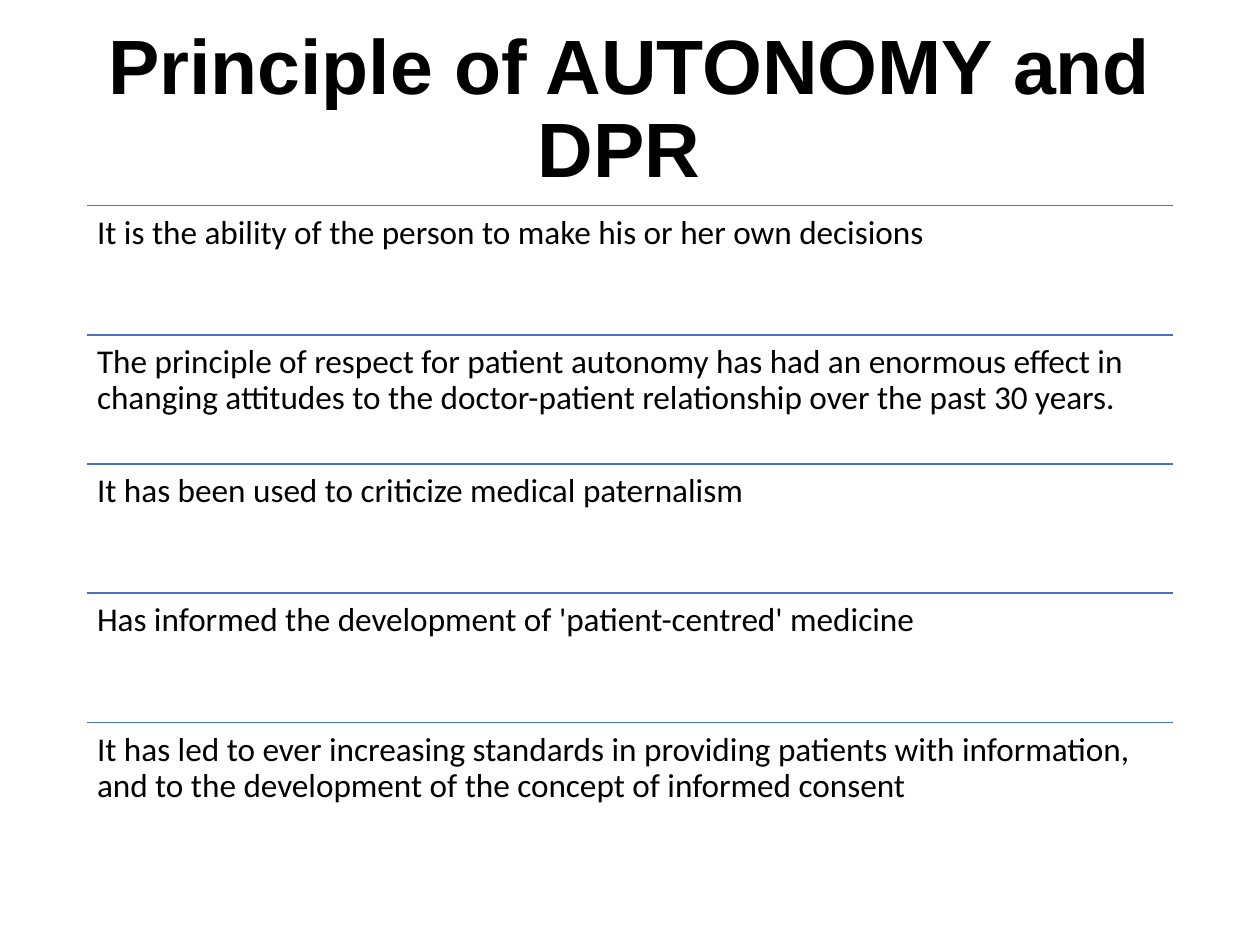
from lxml.etree import SubElement
from pptx import Presentation
from pptx.dml.color import RGBColor
from pptx.enum.shapes import MSO_CONNECTOR
from pptx.enum.text import MSO_ANCHOR, PP_ALIGN
from pptx.oxml.ns import qn
from pptx.util import Inches, Pt

LEFT, WIDTH = 0.69, 8.62
BODY_TOP, BODY_HEIGHT = 1.63, 5.13

STATEMENTS = [
    "It is the ability of the person to make his or her own decisions",
    "The principle of respect for patient autonomy has had an enormous effect in "
    "changing attitudes to the doctor-patient relationship over the past 30 years.",
    "It has been used to criticize medical paternalism",
    "Has informed the development of 'patient-centred' medicine",
    "It has led to ever increasing standards in providing patients with information, "
    "and to the development of the concept of informed consent",
]


def rgb(color):
    return RGBColor.from_string(color)


def add_text(s, text, top, height, size, font, bold=False,
             align=PP_ALIGN.LEFT, anchor=MSO_ANCHOR.TOP, inset=0.08):
    sp = s.shapes.add_textbox(Inches(LEFT), Inches(top), Inches(WIDTH), Inches(height))
    tf = sp.text_frame
    tf.word_wrap = True
    tf.vertical_anchor = anchor
    tf.margin_left = tf.margin_right = Inches(inset)
    tf.margin_top = tf.margin_bottom = Inches(min(inset, 0.08))
    p = tf.paragraphs[0]
    p.alignment = align
    p.line_spacing = 0.9
    r = p.add_run()
    r.text = text
    r.font.size = Pt(size)
    r.font.name = font
    r.font.bold = bold
    r.font.color.rgb = rgb("000000")


def add_rule(s, y):
    """Draw a thin horizontal line across the text width."""
    line = s.shapes.add_connector(MSO_CONNECTOR.STRAIGHT, Inches(LEFT), Inches(y),
                                  Inches(LEFT + WIDTH), Inches(y))
    line.line.color.rgb = rgb("4472C4")
    line.line.width = Pt(1)
    SubElement(line.element.spPr, qn("a:effectLst"))


def main():
    prs = Presentation()
    prs.slide_width, prs.slide_height = Inches(10), Inches(7.5)
    s = prs.slides.add_slide(prs.slide_layouts[6])

    # The trailing space is part of the centred title line.
    add_text(s, "Principle of AUTONOMY and DPR ", 0.4, 0.96, 44, "Arial", bold=True,
             align=PP_ALIGN.CENTER, anchor=MSO_ANCHOR.MIDDLE, inset=0.1)

    row_height = BODY_HEIGHT / len(STATEMENTS)
    for i, statement in enumerate(STATEMENTS):
        top = BODY_TOP + i * row_height
        add_rule(s, top)
        add_text(s, statement, top, row_height, 19, "Calibri")

    prs.save("out.pptx")


if __name__ == "__main__":
    main()
